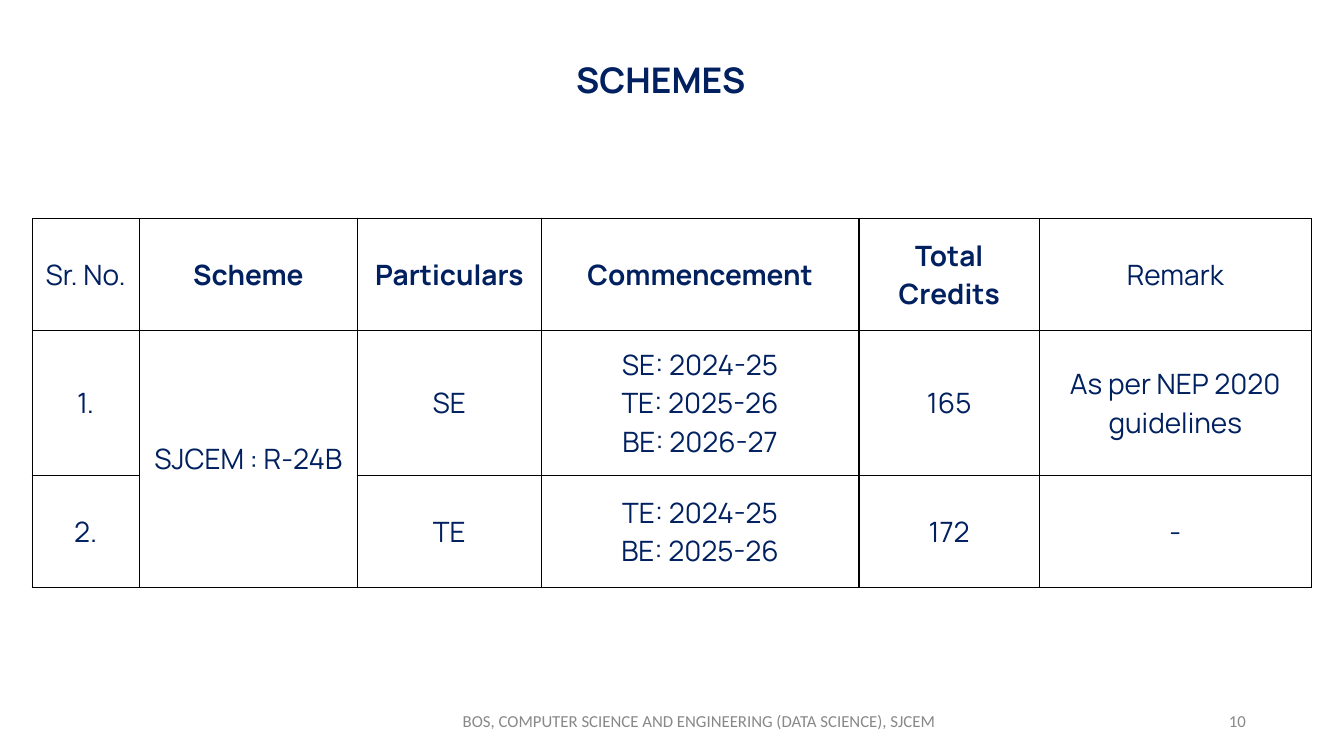
from dataclasses import dataclass

from lxml import etree
from pptx import Presentation
from pptx.dml.color import RGBColor
from pptx.enum.text import MSO_ANCHOR, PP_ALIGN
from pptx.oxml.ns import qn
from pptx.util import Pt

CENTER, RIGHT = PP_ALIGN.CENTER, PP_ALIGN.RIGHT
MIDDLE = MSO_ANCHOR.MIDDLE


@dataclass(frozen=True)
class Theme:
    navy: str = "002060"
    gray: str = "888888"
    white: str = "FFFFFF"
    black: str = "000000"
    main_font: str = "Manrope"
    footer_font: str = "Calibri"
    title_size: float = 25.2
    table_size: float = 20
    footer_size: float = 12
    border: float = 0.96


class SlideBuilder:
    def __init__(self, s, theme):
        self.s = s
        self.theme = theme

    def style(self, p, font, size, color, bold=False, align=CENTER):
        p.alignment = align
        p.font.name = font
        p.font.size = Pt(size)
        p.font.bold = bold
        p.font.color.rgb = RGBColor.from_string(color)

    def text_box(self, text, x, y, w, h):
        sp = self.s.shapes.add_textbox(Pt(x), Pt(y), Pt(w), Pt(h))
        tf = sp.text_frame
        tf.word_wrap = True
        tf.vertical_anchor = MIDDLE
        tf.text = text
        return tf.paragraphs[0]

    def title(self, text, x, y, w, h):
        t = self.theme
        p = self.text_box(text, x, y, w, h)
        p.line_spacing = 0.9
        self.style(p, t.main_font, t.title_size, t.navy, bold=True)

    def footer(self, text, x, y, w, h, align=CENTER):
        t = self.theme
        p = self.text_box(text, x, y, w, h)
        self.style(p, t.footer_font, t.footer_size, t.gray, align=align)

    def borders(self, cell):
        tc_pr = cell._tc.get_or_add_tcPr()
        for side in ("lnL", "lnR", "lnT", "lnB"):
            ln = etree.SubElement(tc_pr, qn(f"a:{side}"), w=str(Pt(self.theme.border)))
            fill = etree.SubElement(ln, qn("a:solidFill"))
            etree.SubElement(fill, qn("a:srgbClr"), val=self.theme.black)

    def table(self, rows, x, y, widths, heights, bold_header):
        t = self.theme
        frame = self.s.shapes.add_table(len(rows), len(widths), Pt(x), Pt(y),
                                        Pt(sum(widths)), Pt(sum(heights)))
        table = frame.table
        table.first_row = table.horz_banding = False
        for column, width in zip(table.columns, widths):
            column.width = Pt(width)
        for row, height in zip(table.rows, heights):
            row.height = Pt(height)
        for i, row in enumerate(rows):
            for j, text in enumerate(row):
                cell = table.cell(i, j)
                self.borders(cell)
                cell.fill.solid()
                cell.fill.fore_color.rgb = RGBColor.from_string(t.white)
                cell.vertical_anchor = MIDDLE
                cell.text_frame.text = text
                for p in cell.text_frame.paragraphs:
                    self.style(p, t.main_font, t.table_size, t.navy,
                               bold=i == 0 and text in bold_header)
        return table


def main():
    prs = Presentation()
    prs.slide_width, prs.slide_height = Pt(960), Pt(540)
    slide = SlideBuilder(prs.slides.add_slide(prs.slide_layouts[6]), Theme())

    # Title
    slide.title("SCHEMES", 180, 40.3, 584, 36)

    # Schemes table, with one scheme spanning both years
    header = ["Sr. No.", "Scheme", "Particulars", "Commencement", "Total Credits", "Remark"]
    rows = [
        header,
        ["1.", "SJCEM : R-24B", "SE", "SE: 2024-25\nTE: 2025-26\nBE: 2026-27",
         "165", "As per NEP 2020 guidelines"],
        ["2.", "", "TE", "TE: 2024-25\nBE: 2025-26", "172", "-"],
    ]
    table = slide.table(rows, 23, 156.2, [76.4, 156, 131.2, 227, 129, 194],
                        [80, 103.7, 80], bold_header=header[1:5])
    table.cell(1, 1).merge(table.cell(2, 1))

    # Footer and slide number
    slide.footer("BOS, COMPUTER SCIENCE AND ENGINEERING (DATA SCIENCE), SJCEM",
                 318, 500.5, 363, 28.8)
    slide.footer("10", 681, 500.5, 216, 28.8, align=RIGHT)

    prs.save("out.pptx")


if __name__ == "__main__":
    main()
